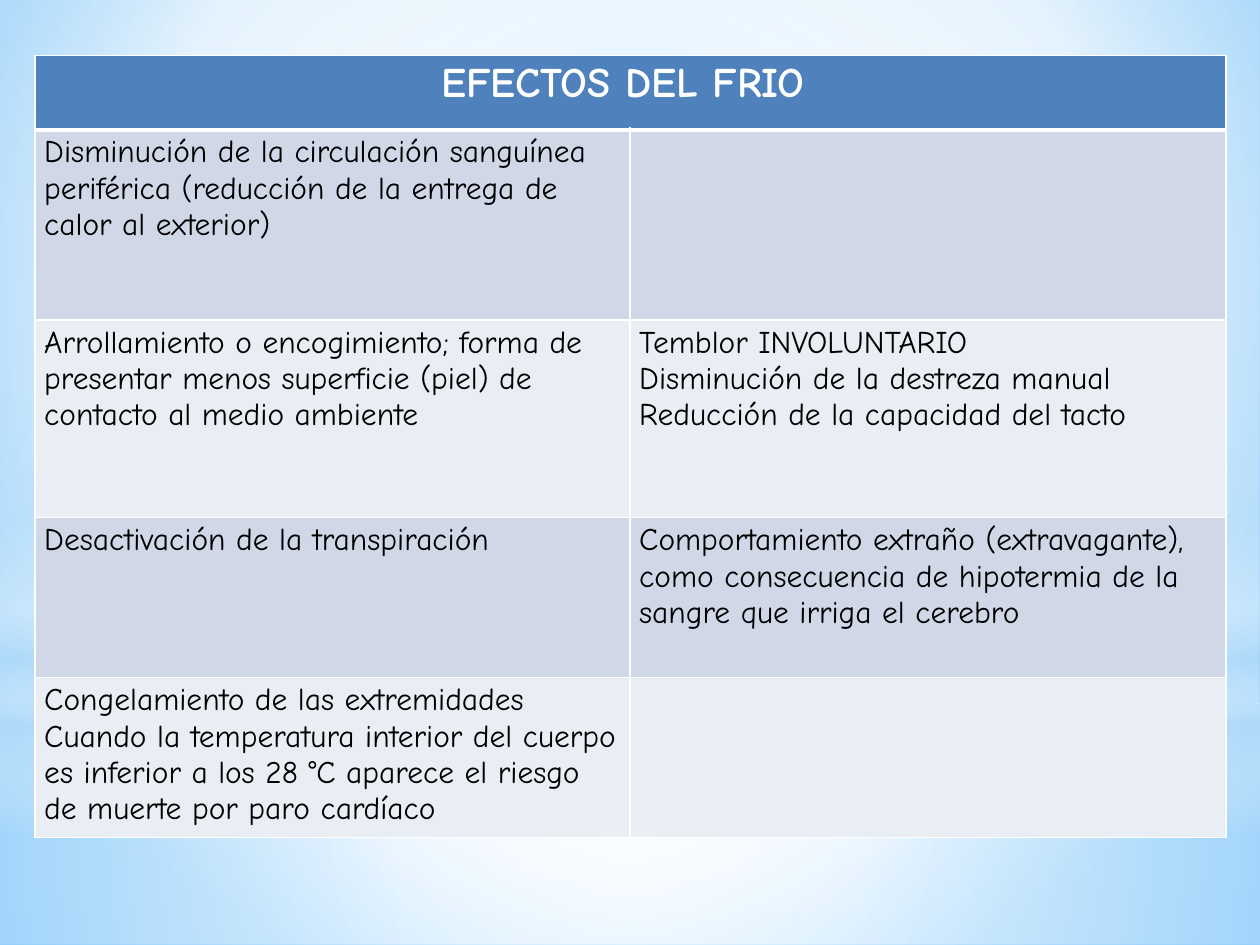
"""Build a slide with a table on the effects of cold over a soft blue sky."""
from typing import NamedTuple

from lxml.etree import SubElement as Sub, Element as Elem
from pptx import Presentation as Deck
from pptx.dml.color import RGBColor as Rgb
from pptx.enum.shapes import MSO_SHAPE as Form
from pptx.enum.text import PP_ALIGN as Align
from pptx.oxml.ns import qn
from pptx.util import Pt

FONT = "Comic Neue"
HUES = {
    "white": "FFFFFF", "black": "000000", "head": "4F81BD",
    "dark": "D0D8E8", "light": "E9EDF4",
    "sky": "9ED5FF", "deep": "5BB9FF", "pale": "B4DCFA",
}
WIDE, HIGH = 720, 540
MID = (50, 50, 50, 50)


class Stop(NamedTuple):
    at: int
    hue: str
    alpha: int = 100


class Glow(NamedTuple):
    form: Form
    top: float
    high: float
    stops: list[Stop]
    focus: tuple[int, ...] | None = MID


class Row(NamedTuple):
    high: float
    cells: tuple[str, str]


SKY = [Stop(0, "sky"), Stop(60, "white"), Stop(100, "deep")]
GLOWS = [
    Glow(Form.RECTANGLE, 401.8, 138.2,
         [Stop(0, "white", 91), Stop(37, "white", 76), Stop(100, "pale", 79)]),
    Glow(Form.RECTANGLE, 0, 401.8,
         [Stop(0, "white", 89), Stop(48, "white", 62), Stop(100, "pale", 79)]),
    Glow(Form.RECTANGLE, 296.6, 180,
         [Stop(0, "white", 0), Stop(29, "white", 30), Stop(45, "pale", 40),
          Stop(55, "white", 26), Stop(65, "pale", 60), Stop(100, "white", 0)],
         None),
    Glow(Form.OVAL, 126, 401.8, [Stop(0, "white"), Stop(56, "white", 0)]),
]

COLS = (340, 340.5)
ROWS = [
    Row(42.5, ("EFECTOS DEL FRIO ", "")),
    Row(108.7, ("Disminución de la circulación sanguínea periférica "
                "(reducción de la entrega de calor al exterior)", "")),
    Row(113, ("Arrollamiento o encogimiento; forma de presentar menos "
              "superficie (piel) de contacto al medio ambiente",
              "Temblor INVOLUNTARIO\nDisminución de la destreza manual\n"
              "Reducción de la capacidad del tacto")),
    Row(91.4, ("Desactivación de la transpiración",
               "Comportamiento extraño (extravagante), como consecuencia de "
               "hipotermia de la sangre que irriga el cerebro")),
    Row(91.4, ("Congelamiento de las extremidades\n"
               "Cuando la temperatura interior del cuerpo es inferior a los "
               "28 °C aparece el riesgo de muerte por paro cardíaco", "")),
]


def shade(fill, props, stops: list[Stop], focus) -> None:
    fill.solid()
    grad = Elem(qn("a:gradFill"), rotWithShape="1")
    items = Sub(grad, qn("a:gsLst"))
    for stop in stops:
        mark = Sub(items, qn("a:gs"), pos=str(stop.at * 1000))
        tint = Sub(mark, qn("a:srgbClr"), val=HUES[stop.hue])
        if stop.alpha < 100:
            Sub(tint, qn("a:alpha"), val=str(stop.alpha * 1000))
    if focus:
        ring = Sub(grad, qn("a:path"), path="circle")
        sides = {side: str(part * 1000) for side, part in zip("ltrb", focus)}
        Sub(ring, qn("a:fillToRect"), sides)
    else:
        Sub(grad, qn("a:lin"), ang="5400000", scaled="0")
    props.replace(props.find(qn("a:solidFill")), grad)


def draw_glow(slide, glow: Glow) -> None:
    shape = slide.shapes.add_shape(
        glow.form, 0, Pt(glow.top), Pt(WIDE), Pt(glow.high))
    shape.shadow.inherit = False
    shape.line.fill.background()
    shade(shape.fill, shape._element.spPr, glow.stops, glow.focus)


def write(frame, text: str, *, size: float = 18, hue: str = "black",
          bold: bool = False, align: Align = Align.LEFT) -> None:
    frame.text = text
    for para in frame.paragraphs:
        para.alignment = align
        for run in para.runs:
            font = run.font
            font.name, font.size, font.bold = FONT, Pt(size), bold
            font.color.rgb = Rgb.from_string(HUES[hue])


def style(cell, hue: str, top: float, base: float) -> None:
    cell.fill.solid()
    cell.fill.fore_color.rgb = Rgb.from_string(HUES[hue])
    cell.margin_left = cell.margin_right = Pt(5.3)
    cell.margin_top = cell.margin_bottom = Pt(2.7)
    props = cell._tc.get_or_add_tcPr()
    for spot, (side, width) in enumerate(zip("LRTB", (1, 1, top, base))):
        line = Elem(qn(f"a:ln{side}"), w=str(Pt(width)))
        Sub(Sub(line, qn("a:solidFill")), qn("a:srgbClr"), val=HUES["white"])
        props.insert(spot, line)


def draw_table(slide, rows: list[Row]) -> None:
    table = slide.shapes.add_table(
        len(rows), len(COLS), Pt(20), Pt(31.7), Pt(sum(COLS)),
        Pt(sum(row.high for row in rows))).table
    for col, width in zip(table.columns, COLS):
        col.width = Pt(width)
    for i, row in enumerate(rows):
        table.rows[i].height = Pt(row.high)
        hue = "head" if i == 0 else "dark" if i % 2 else "light"
        for j, text in enumerate(row.cells):
            cell = table.cell(i, j)
            style(cell, hue, 3 if i == 1 else 1, 3 if i == 0 else 1)
            if text and i:
                write(cell.text_frame, text)
    head = table.cell(0, 0)
    head.merge(table.cell(0, 1))
    write(head.text_frame, rows[0].cells[0], size=24, hue="white", bold=True,
          align=Align.CENTER)


def main() -> None:
    deck = Deck()
    deck.slide_width, deck.slide_height = Pt(WIDE), Pt(HIGH)
    slide = deck.slides.add_slide(deck.slide_layouts[6])
    fill = slide.background.fill
    fill.solid()
    shade(fill, slide._element.cSld.bg.bgPr, SKY, (20, 10, 20, 60))
    for glow in GLOWS:
        draw_glow(slide, glow)
    draw_table(slide, ROWS)
    deck.save("out.pptx")


if __name__ == "__main__":
    main()
